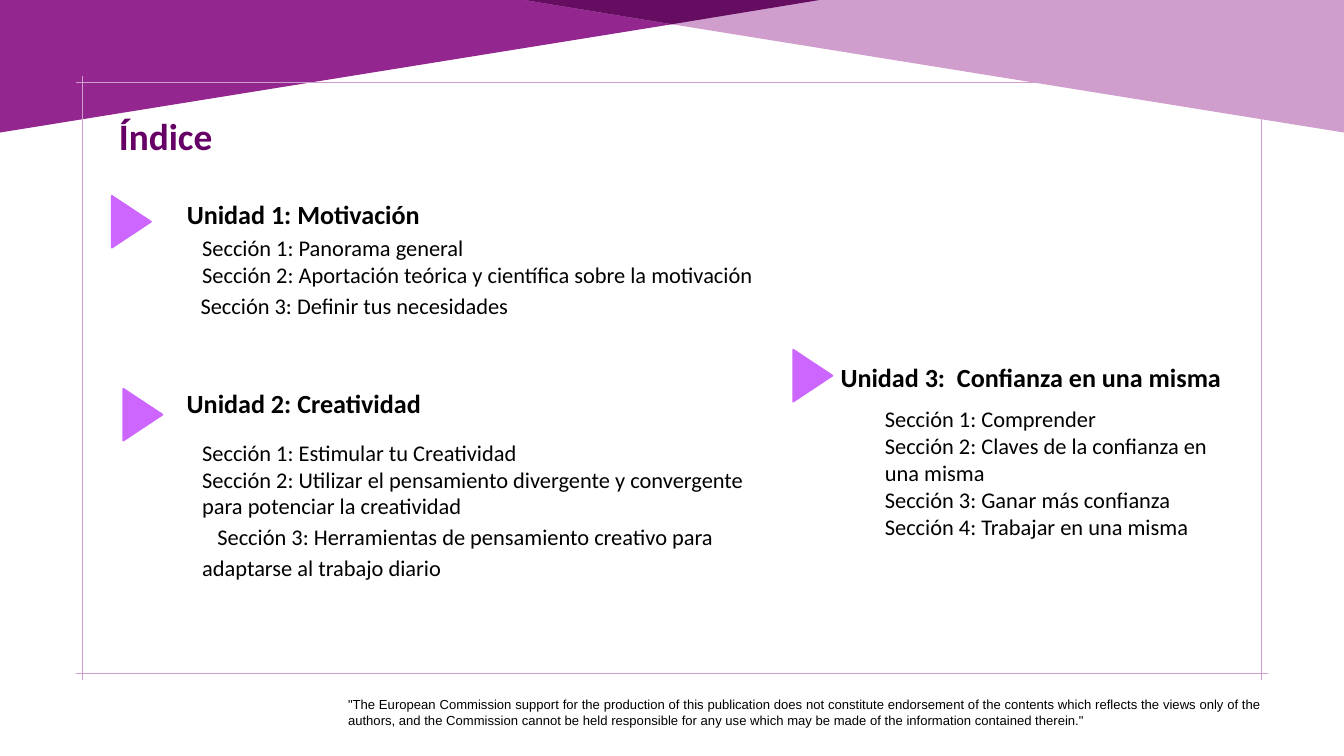
from lxml import etree
from pptx import Presentation
from pptx import util as u
from pptx.dml.color import RGBColor
from pptx.enum import shapes, text
from pptx.oxml import ns

Pt = u.Pt
WIDTH, HEIGHT = 1440, 810
COLORS = {
    "purple": "93268F",
    "lilac": "CF9ECC",
    "plum": "640D61",
    "title": "660066",
    "marker": "CC66FF",
    "ink": "000000",
}

# Each unit: heading, heading box, marker corner, section box, sections.
# A section is (text, left margin, first-line indent, line spacing).
UNITS = [
    ("Unidad 1: Motivación", (191.5, 204.5, 688, 46), 1.15, (113, 216.7),
     (191.5, 247.7, 688, 98.6), [
         ("Sección 1: Panorama general", 18, 0, 1),
         ("Sección 2: Aportación teórica y científica sobre la motivación", 18, 0, 1),
         ("Sección 3: Definir tus necesidades", 16.3, 0, 1.15)]),
    ("Unidad 2: Creatividad", (191.5, 411.8, 595.4, 41), 1, (125.3, 423.4),
     (191.5, 466.6, 622.8, 195), [
         ("Sección 1: Estimular tu Creatividad", 18, 0, 1),
         ("Sección 2: Utilizar el pensamiento divergente y convergente "
          "para potenciar la creatividad", 18, 0, 1),
         ("Sección 3: Herramientas de pensamiento creativo para "
          "adaptarse al trabajo diario", 18, 16.3, 1.15)]),
    ("Unidad 3:  Confianza en una misma", (892, 383.8, 435, 41), 1, (843.1, 381.6),
     (923, 430.6, 403.2, 152.6), [
         ("Sección 1: Comprender", 18, 0, 1),
         ("Sección 2: Claves de la confianza en una misma", 18, 0, 1),
         ("Sección 3: Ganar más confianza", 18, 0, 1),
         ("Sección 4: Trabajar en una misma", 18, 0, 1)]),
]
DISCLAIMER = (
    '"The European Commission support for the production of this publication does not '
    "constitute endorsement of the contents which reflects the views only of the authors, "
    "and the Commission cannot be held responsible for any use which may be made of the "
    'information contained therein."')


def color(name):
    return RGBColor.from_string(COLORS[name])


def place(item, left, top, width, height):
    item.left, item.top, item.width, item.height = map(Pt, (left, top, width, height))


def set_frame(box, side=7.2):
    frame = box.text_frame
    frame.word_wrap = True
    frame.auto_size = text.MSO_AUTO_SIZE.NONE
    frame.vertical_anchor = text.MSO_ANCHOR.TOP
    frame.margin_left = frame.margin_right = Pt(side)
    frame.margin_top = frame.margin_bottom = Pt(3.6)
    return frame


def add_span(para, words, size, ink="ink", bold=False, font="Calibri"):
    span = para.add_run()
    span.text = words
    span.font.name = font
    span.font.size = Pt(size)
    span.font.bold = bold
    span.font.color.rgb = color(ink)


def add_box(page, area, side=7.2):
    return set_frame(page.shapes.add_textbox(*map(Pt, area)), side)


def add_polygon(page, points, fill):
    builder = page.shapes.build_freeform(*points[0], scale=float(Pt(1)))
    builder.add_line_segments(points[1:], close=True)
    polygon = builder.convert_to_shape()
    polygon.shadow.inherit = False
    polygon.fill.solid()
    polygon.fill.fore_color.rgb = color(fill)
    polygon.line.fill.background()


def add_rule(page, x1, y1, x2, y2):
    rule = page.shapes.add_connector(
        shapes.MSO_CONNECTOR.STRAIGHT, Pt(x1), Pt(y1), Pt(x2), Pt(y2))
    rule.line.color.rgb = color("lilac")
    rule.line.width = Pt(0.7)
    etree.SubElement(rule._element.spPr, ns.qn("a:effectLst"))


def add_border(page):
    left, top, right, bottom, overhang = 88.2, 88.2, 1351.8, 721.8, 7
    for y in (top, bottom):
        add_rule(page, left - overhang, y, right + overhang, y)
    for x in (left, right):
        add_rule(page, x, top - overhang, x, bottom + overhang)


def add_banner(page):
    wedge = [(0, 142.5), (0, 0), (562, 0), (720, 26)]
    mirrored = [(WIDTH - x, y) for x, y in wedge]
    add_polygon(page, [(x, y) for x, y in [wedge[0], wedge[1], (878, 0), wedge[3]]], "purple")
    add_border(page)
    add_polygon(page, [mirrored[0], mirrored[1], wedge[2], wedge[3]], "lilac")
    add_polygon(page, [wedge[3], wedge[2], mirrored[2]], "plum")


def add_marker(page, left, top):
    marker = page.shapes.add_shape(
        shapes.MSO_SHAPE.ISOSCELES_TRIANGLE, Pt(left), Pt(top), Pt(55.4), Pt(41.8))
    marker.rotation = 90
    marker.shadow.inherit = False
    marker.fill.solid()
    marker.fill.fore_color.rgb = color("marker")
    marker.line.color.rgb = color("marker")
    marker.line.width = Pt(2)


def add_sections(page, area, sections):
    frame = add_box(page, area)
    for index, (words, margin, indent, spacing) in enumerate(sections):
        para = frame.add_paragraph() if index else frame.paragraphs[0]
        para.line_spacing = spacing
        properties = para._p.get_or_add_pPr()
        properties.set("marL", str(Pt(margin)))
        properties.set("indent", str(Pt(indent)))
        add_span(para, words, 24)


def add_unit(page, heading, heading_area, spacing, corner, section_area, sections):
    para = add_box(page, heading_area, side=8.6).paragraphs[0]
    para.line_spacing = spacing
    add_span(para, heading, 28, bold=True)
    add_sections(page, section_area, sections)
    add_marker(page, *corner)


def add_title(page):
    title = page.shapes.title
    place(title, 120.2, 118, 745, 55.4)
    para = set_frame(title).paragraphs[0]
    para.alignment = text.PP_ALIGN.LEFT
    add_span(para, "Índice", 40, "title", bold=True)


def add_disclaimer(page):
    para = add_box(page, (365.8, 741, 993, 37.4)).paragraphs[0]
    para.alignment = text.PP_ALIGN.JUSTIFY
    para.line_spacing = 1.07
    add_span(para, DISCLAIMER, 14, font="Arial")


def main():
    deck = Presentation()
    deck.slide_width, deck.slide_height = Pt(WIDTH), Pt(HEIGHT)
    page = deck.slides.add_slide(deck.slide_layouts[5])

    # Background shapes and frame
    add_banner(page)

    # Title, units and footer
    add_title(page)
    for unit in UNITS:
        add_unit(page, *unit)
    add_disclaimer(page)

    deck.save("out.pptx")


if __name__ == "__main__":
    main()
